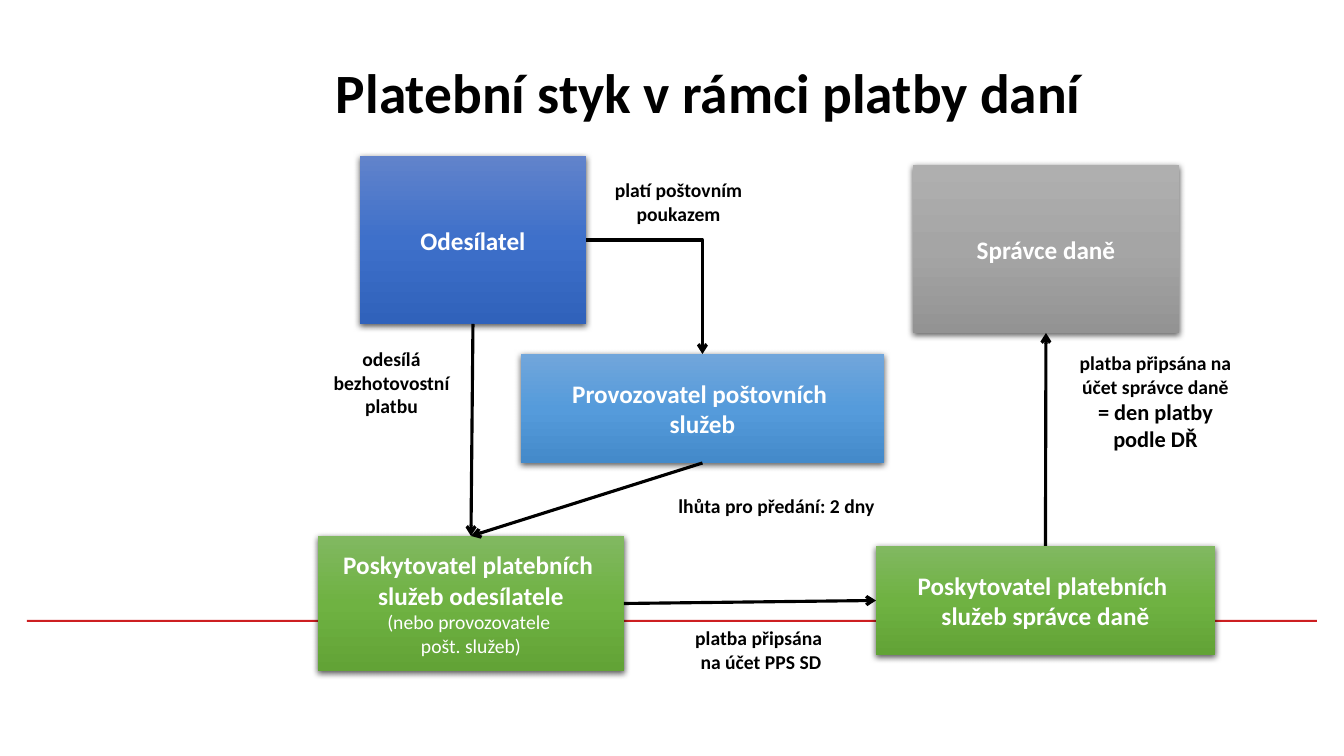
import copy

import pptx
import pptx.dml.color
import pptx.enum.shapes
import pptx.enum.text
import pptx.oxml.ns
import pptx.util
from lxml import etree

# Content: boxes in px (left, top, width, height)
COLORS = {"text": "000000", "box_text": "FFFFFF", "rule": "CD1F21"}
GRADIENTS = {
    "sky": ("71A6DB", "559BDB", "448ACA"),
    "blue": ("6183CB", "3E70CA", "3062BB"),
    "green": ("81B861", "6FB242", "62A336"),
    "gray": ("AFAFAF", "A5A5A5", "939393"),
}
TITLE = ("Platební styk v rámci platby daní", (326, 59, 902, 64), 39.6)
RULE = (27, 620, 1290, 2)

# Each paragraph is (lines, size, bold)
PARTIES = {
    "post": ((521, 354, 363, 109), "sky", [
        (["Provozovatel poštovních "], 18, True),
        (["služeb"], 18, True)]),
    "sender": ((360, 156, 226, 168), "blue", [(["Odesílatel"], 18, True)]),
    "sender_bank": ((318, 536, 306, 135), "green", [
        (["Poskytovatel platebních ", "služeb odesílatele"], 18, True),
        (["(nebo provozovatele ", "pošt. služeb)"], 14, False)]),
    "tax_office": ((913, 165, 266, 168), "gray", [(["Správce daně"], 18, True)]),
    "tax_bank": ((876, 546, 339, 109), "green", [
        (["Poskytovatel platebních ", "služeb správce daně"], 18, True)]),
}
LABELS = [
    ((311, 342, 161, 82), [
        (["odesílá"], 14, True), (["bezhotovostní platbu"], 14, True)]),
    ((594, 173, 169, 57), [(["platí poštovním poukazem"], 14, True)]),
    ((1060, 346, 191, 112), [
        (["platba připsána na účet správce daně"], 14, True),
        (["= den platby podle DŘ"], 16, True)]),
    ((652, 621, 218, 57), [
        (["platba připsána "], 14, True), (["na účet PPS SD"], 14, True)]),
    ((640, 489, 273, 34), [(["lhůta pro předání: 2 dny"], 14, True)]),
]
TOP, LEFT, BOTTOM, RIGHT = range(4)
ARROWS = [
    ("sender", BOTTOM, "sender_bank", TOP, "line"),
    ("post", BOTTOM, "sender_bank", TOP, "line"),
    ("sender", RIGHT, "post", TOP, "bentConnector2"),
    ("sender_bank", RIGHT, "tax_bank", LEFT, "line"),
    ("tax_bank", TOP, "tax_office", BOTTOM, "line"),
]

PX = 914400 / 100.8
ALIGN = pptx.enum.text.PP_ALIGN
ANCHOR = pptx.enum.text.MSO_ANCHOR
CONNECTOR = pptx.enum.shapes.MSO_CONNECTOR
RECTANGLE = pptx.enum.shapes.MSO_SHAPE.RECTANGLE
qn = pptx.oxml.ns.qn


def emu(box):
    return [round(value * PX) for value in box]


def rgb(value):
    return pptx.dml.color.RGBColor.from_string(value)


def write(shape, paragraphs, color, align=ALIGN.CENTER,
          anchor=ANCHOR.TOP, wrap=True):
    frame = shape.text_frame
    frame.word_wrap = wrap
    frame.vertical_anchor = anchor
    for index, (lines, size, bold) in enumerate(paragraphs):
        paragraph = frame.add_paragraph() if index else frame.paragraphs[0]
        paragraph.alignment = align
        for number, line in enumerate(lines):
            if number:
                paragraph.add_line_break()
            run = paragraph.add_run()
            run.text = line
            run.font.name = "Calibri"
            run.font.size = pptx.util.Pt(size)
            run.font.bold = bold
            run.font.color.rgb = rgb(color)


def add_rectangle(slide, box):
    shape = slide.shapes.add_shape(RECTANGLE, *emu(box))
    shape.line.fill.background()
    shape.shadow.inherit = False
    return shape


def fill_gradient(shape, colors):
    shape.fill.gradient()
    shape.fill.gradient_angle = 270
    stop_list = shape._element.spPr.find(".//" + qn("a:gsLst"))
    stop_list.insert(1, copy.deepcopy(stop_list[0]))
    for index, stop in enumerate(shape.fill.gradient_stops):
        stop.position = index / 2
        stop.color.rgb = rgb(colors[index])


def add_shadow(shape):
    effects = shape._element.spPr.find(qn("a:effectLst"))
    shadow = etree.SubElement(effects, qn("a:outerShdw"), blurRad="57150",
                              dist="19050", dir="5400000", rotWithShape="0")
    color = etree.SubElement(shadow, qn("a:srgbClr"), val="000000")
    etree.SubElement(color, qn("a:alpha"), val="63000")


def side_point(box, side):
    left, top, width, height = box
    return {TOP: (left + width / 2, top),
            LEFT: (left, top + height / 2),
            BOTTOM: (left + width / 2, top + height),
            RIGHT: (left + width, top + height / 2)}[side]


def add_arrow(slide, shapes, start, start_side, end, end_side, geometry):
    points = side_point(PARTIES[start][0], start_side) + side_point(PARTIES[end][0], end_side)
    kind = CONNECTOR.STRAIGHT if geometry == "line" else CONNECTOR.ELBOW
    connector = slide.shapes.add_connector(kind, *emu(points))
    connector.begin_connect(shapes[start], start_side)
    connector.end_connect(shapes[end], end_side)
    connector.line.color.rgb = rgb(COLORS["text"])
    connector.line.width = pptx.util.Pt(2.25)
    properties = connector._element.spPr
    properties.find(qn("a:prstGeom")).set("prst", geometry)
    etree.SubElement(properties.find(qn("a:ln")), qn("a:tailEnd"), type="arrow")
    etree.SubElement(properties, qn("a:effectLst"))


def main():
    presentation = pptx.Presentation()
    presentation.slide_width, presentation.slide_height = emu((1344, 756))
    slide = presentation.slides.add_slide(presentation.slide_layouts[6])

    # Red rule behind the diagram
    rule = add_rectangle(slide, RULE)
    rule.fill.solid()
    rule.fill.fore_color.rgb = rgb(COLORS["rule"])

    # Parties to the payment
    shapes = {}
    for name, (box, gradient, paragraphs) in PARTIES.items():
        shape = add_rectangle(slide, box)
        fill_gradient(shape, GRADIENTS[gradient])
        add_shadow(shape)
        write(shape, paragraphs, COLORS["box_text"],
              anchor=ANCHOR.MIDDLE, wrap=False)
        shapes[name] = shape

    # Labels beside the arrows
    for box, paragraphs in LABELS:
        write(slide.shapes.add_textbox(*emu(box)), paragraphs, COLORS["text"])

    # Payment flow
    for arrow in ARROWS:
        add_arrow(slide, shapes, *arrow)

    # Title
    text, box, size = TITLE
    write(slide.shapes.add_textbox(*emu(box)), [([text], size, True)],
          COLORS["text"], align=ALIGN.LEFT, anchor=ANCHOR.MIDDLE)

    presentation.save("out.pptx")


if __name__ == "__main__":
    main()
